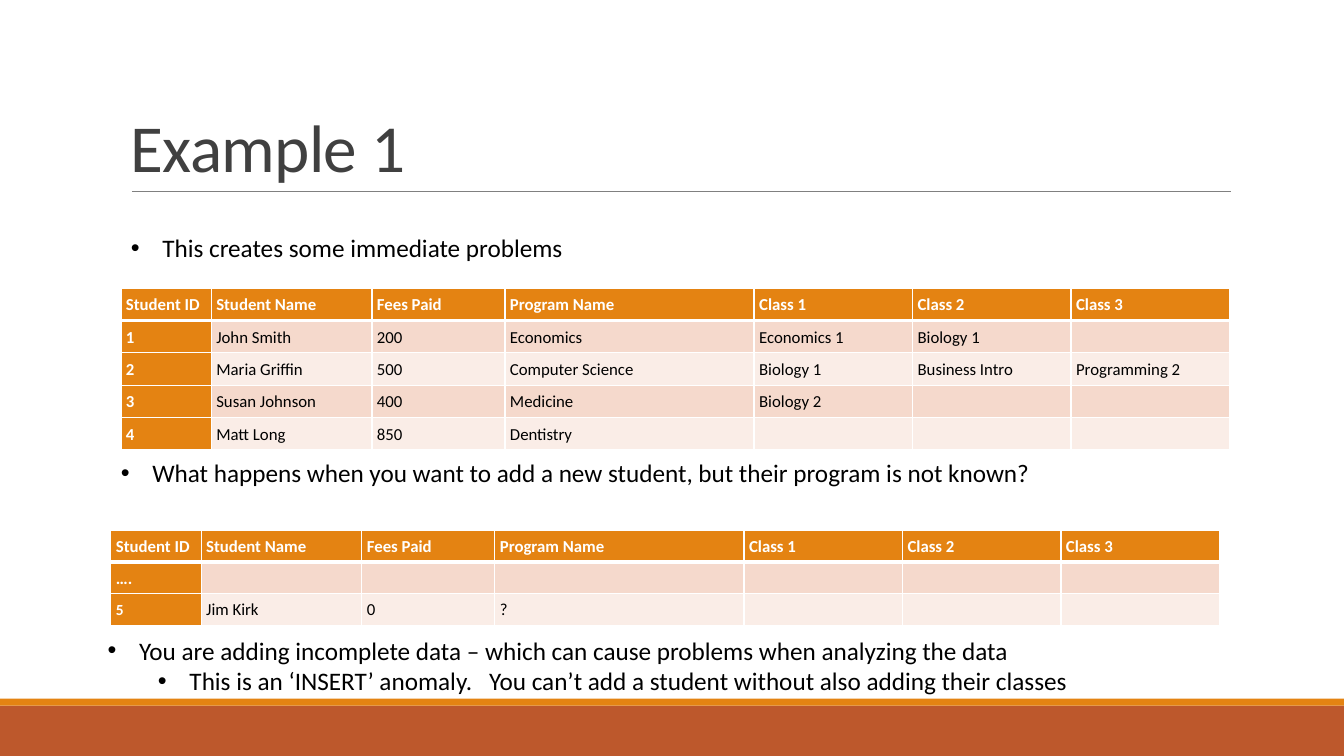
"""Build the "Example 1" slide on the insert anomaly in a student table."""
from lxml.etree import SubElement
from pptx import Presentation
from pptx.dml.color import RGBColor
from pptx.enum.shapes import MSO_CONNECTOR as CONNECTOR, MSO_SHAPE as SHAPE
from pptx.enum.text import MSO_ANCHOR as ANCHOR
from pptx.oxml.ns import qn
from pptx.util import Pt

FONT = "Calibri"
ORANGE, RUST, WHITE, BLACK = "E48312", "BD582C", "FFFFFF", "000000"
BANDS = ["F5D9CC", "FAEDE7"]
WIDTH, HEIGHT = 960, 540

HEADER = ["Student ID", "Student Name", "Fees Paid", "Program Name",
          "Class 1", "Class 2", "Class 3"]
COLUMNS = [64.5, 114.8, 95, 178, 113.2, 113.2, 113.2]
STUDENTS = [
    ["1", "John Smith", "200", "Economics", "Economics 1", "Biology 1", ""],
    ["2", "Maria Griffin", "500", "Computer Science", "Biology 1",
     "Business Intro", "Programming 2"],
    ["3", "Susan Johnson", "400", "Medicine", "Biology 2", "", ""],
    ["4", "Matt Long", "850", "Dentistry", "", "", ""],
]
NEW_STUDENT = [
    ["….", "", "", "", "", "", ""],
    ["5", "Jim Kirk", "0", "?", "", "", ""],
]
TABLES = [(86.4, 205.9, 23.1, STUDENTS, {}),
          (79.2, 378.7, 22.6, NEW_STUDENT, {"5": 11})]
BULLETS = [
    (86.4, 162.7, 28.8, [(0, "This creates some immediate problems")]),
    (79.2, 323.3, 51, [(0, "What happens when you want to add a new student, "
                           "but their program is not known?")]),
    (69.8, 450, 51, [
        (0, "You are adding incomplete data – which can cause problems "
            "when analyzing the data"),
        (1, "This is an ‘INSERT’ anomaly.   You can’t add a student "
            "without also adding their classes")]),
]


def rgb(color):
    return RGBColor.from_string(color)


def format_run(r, size, color, bold=False):
    r.font.name, r.font.size, r.font.bold = FONT, Pt(size), bold
    r.font.color.rgb = rgb(color)


def add_box(s, x, y, w, h):
    tf = s.shapes.add_textbox(Pt(x), Pt(y), Pt(w), Pt(h)).text_frame
    tf.word_wrap = True
    return tf


def add_bar(s, y, h, color):
    sp = s.shapes.add_shape(SHAPE.RECTANGLE, 0, Pt(y), Pt(WIDTH), Pt(h))
    sp.shadow.inherit = False
    sp.fill.solid()
    sp.fill.fore_color.rgb = rgb(color)
    sp.line.fill.background()


def add_title(s, text):
    tf = add_box(s, 86.4, 22.3, 792, 114.5)
    tf.vertical_anchor = ANCHOR.BOTTOM
    p = tf.paragraphs[0]
    p.text, p.line_spacing = text, 0.85
    format_run(p.runs[0], 48, "404040")
    p.runs[0].font._element.set("spc", "-50")
    line = s.shapes.add_connector(CONNECTOR.STRAIGHT, Pt(94.3), Pt(136.8),
                                  Pt(879), Pt(136.8))
    line.line.color.rgb, line.line.width = rgb("808080"), Pt(0.5)
    SubElement(line._element.spPr, qn("a:effectLst"))


def add_bullets(s, x, y, h, items):
    tf = add_box(s, x, y, 784.8, h)
    for i, (level, text) in enumerate(items):
        p = tf.add_paragraph() if i else tf.paragraphs[0]
        p.text, p.level = text, level
        format_run(p.runs[0], 18, BLACK)
        pPr = p._p.get_or_add_pPr()
        pPr.set("marL", str(Pt(22.5 + 36 * level)))
        pPr.set("indent", str(Pt(-22.5)))
        SubElement(pPr, qn("a:buFont"), typeface="Arial")
        SubElement(pPr, qn("a:buChar"), char="•")


def set_borders(cell, top, bottom):
    tcPr = cell._tc.get_or_add_tcPr()
    for side, width in zip("LRTB", (1, 1, top, bottom)):
        ln = SubElement(tcPr, qn(f"a:ln{side}"), w=str(Pt(width)))
        fill = SubElement(ln, qn("a:solidFill"))
        SubElement(fill, qn("a:srgbClr"), val=WHITE)


def fill_cell(cell, text, row, col, size):
    head = row == 0 or col == 0
    set_borders(cell, 3 if row == 1 else 1, 3 if row == 0 else 1)
    cell.fill.solid()
    cell.fill.fore_color.rgb = rgb(ORANGE if head else BANDS[(row - 1) % 2])
    cell.vertical_anchor = ANCHOR.MIDDLE
    cell.margin_left = cell.margin_right = Pt(3.6)
    cell.margin_top = cell.margin_bottom = Pt(3.6)
    p = cell.text_frame.paragraphs[0]
    p.line_spacing = 1.07
    if text:
        p.text = text
        format_run(p.runs[0], size, WHITE if head else BLACK, head)
    else:
        SubElement(p._p, qn("a:endParaRPr"), sz=str(size * 100))


def add_students(s, x, y, row_height, students, sizes):
    rows = [HEADER] + students
    table = s.shapes.add_table(len(rows), len(COLUMNS), Pt(x), Pt(y),
                               Pt(sum(COLUMNS)),
                               Pt(row_height * len(rows))).table
    for column, width in zip(table.columns, COLUMNS):
        column.width = Pt(width)
    for i, row in enumerate(rows):
        table.rows[i].height = Pt(row_height)
        for j, text in enumerate(row):
            fill_cell(table.cell(i, j), text, i, j, sizes.get(text, 12))


def main():
    prs = Presentation()
    prs.slide_width, prs.slide_height = Pt(WIDTH), Pt(HEIGHT)
    s = prs.slides.add_slide(prs.slide_layouts[6])
    add_bar(s, 504, 36, RUST)
    add_bar(s, 499, 5, ORANGE)
    add_title(s, "Example 1")
    for table in TABLES:
        add_students(s, *table)
    for bullets in BULLETS:
        add_bullets(s, *bullets)
    prs.save("out.pptx")


if __name__ == "__main__":
    main()
